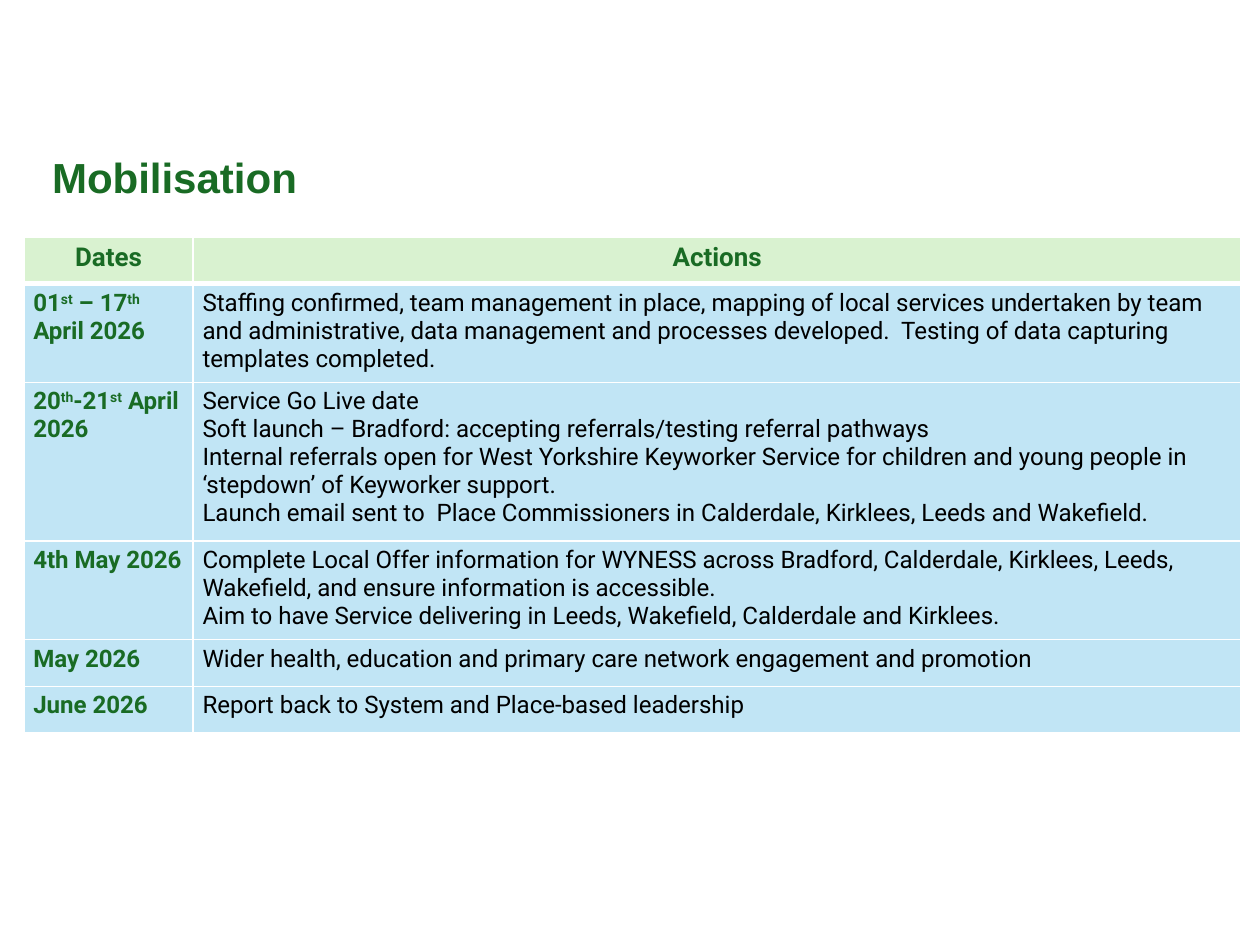
from lxml import etree
from pptx import Presentation
from pptx.dml.color import RGBColor
from pptx.enum.text import MSO_ANCHOR, PP_ALIGN
from pptx.oxml.ns import qn
from pptx.util import Inches, Pt

LEFT, CENTER = PP_ALIGN.LEFT, PP_ALIGN.CENTER
TOP = MSO_ANCHOR.TOP

# Content: ^ marks the start and end of a superscript
TITLE = "Mobilisation"
HEADERS = ("Dates", "Actions")
MILESTONES = [
    ("01^st^ – 17^th^ April 2026", [
        "Staffing confirmed, team management in place, mapping of local services "
        "undertaken by team and administrative, data management and processes "
        "developed.  Testing of data capturing templates completed."]),
    ("20^th^-21^st^ April 2026", [
        "Service Go Live date",
        "Soft launch – Bradford: accepting referrals/testing referral pathways",
        "Internal referrals open for West Yorkshire Keyworker Service for children "
        "and young people in ‘stepdown’ of Keyworker support.",
        "Launch email sent to  Place Commissioners in Calderdale, Kirklees, Leeds "
        "and Wakefield."]),
    ("4th May 2026", [
        "Complete Local Offer information for WYNESS across Bradford, Calderdale, "
        "Kirklees, Leeds, Wakefield, and ensure information is accessible.",
        "Aim to have Service delivering in Leeds, Wakefield, Calderdale and Kirklees."]),
    ("May 2026", [
        "Wider health, education and primary care network engagement and promotion"]),
    ("June 2026", ["Report back to System and Place-based leadership"]),
]
COL_WIDTHS = (1.27, 7.86)
ROW_HEIGHTS = (0.35, 0.74, 1.19, 0.74, 0.35, 0.35)

THEME = {
    "green": "196B24", "black": "000000", "white": "FFFFFF",
    "header_fill": "D9F2D0", "body_fill": "C1E5F5",
    "title_font": "Arial", "table_font": "Roboto",
    "title_size": 22.7, "header_size": 14, "body_size": 13,
    "line": 1, "header_line": 3,
}


def style(p, font, size, color, bold, align=LEFT):
    p.alignment = align
    p.font.name = THEME[font]
    p.font.size = Pt(THEME[size])
    p.font.color.rgb = RGBColor.from_string(THEME[color])
    p.font.bold = bold


def set_margins(box):
    box.margin_left = box.margin_right = Inches(0.07)
    box.margin_top = box.margin_bottom = Inches(0.04)


def add_runs(p, text):
    for i, part in enumerate(text.split("^")):
        if part:
            r = p.add_run()
            r.text = part
            if i % 2:
                r.font._element.set("baseline", "30000")


def set_borders(cell, top, bottom):
    tc_pr = cell._tc.get_or_add_tcPr()
    for side, width in (("L", "line"), ("R", "line"), ("T", top), ("B", bottom)):
        ln = etree.SubElement(tc_pr, qn(f"a:ln{side}"), w=str(Pt(THEME[width])))
        fill = etree.SubElement(ln, qn("a:solidFill"))
        etree.SubElement(fill, qn("a:srgbClr"), val=THEME["white"])


def fill_cell(cell, lines, fill, size, color, bold, align, top, bottom):
    set_margins(cell)
    set_borders(cell, top, bottom)
    cell.fill.solid()
    cell.fill.fore_color.rgb = RGBColor.from_string(THEME[fill])
    tf = cell.text_frame
    for i, line in enumerate(lines):
        p = tf.add_paragraph() if i else tf.paragraphs[0]
        add_runs(p, line)
        style(p, "table_font", size, color, bold, align)


prs = Presentation()
prs.slide_width, prs.slide_height = Inches(9.45), Inches(7.09)
s = prs.slides.add_slide(prs.slide_layouts[6])

# Title
tf = s.shapes.add_textbox(Inches(0.32), Inches(1.1), Inches(8.02), Inches(0.67)).text_frame
tf.word_wrap = True
tf.vertical_anchor = TOP
set_margins(tf)
tf.paragraphs[0].text = TITLE
style(tf.paragraphs[0], "title_font", "title_size", "green", True)

# Timetable
table = s.shapes.add_table(
    len(ROW_HEIGHTS), len(COL_WIDTHS), Inches(0.18), Inches(1.78),
    Inches(sum(COL_WIDTHS)), Inches(sum(ROW_HEIGHTS))).table
table.horz_banding = False
for column, width in zip(table.columns, COL_WIDTHS):
    column.width = Inches(width)
for row, height in zip(table.rows, ROW_HEIGHTS):
    row.height = Inches(height)

for c, header in enumerate(HEADERS):
    fill_cell(table.cell(0, c), [header], "header_fill", "header_size",
              "green", True, CENTER, "line", "header_line")
for r, (date, actions) in enumerate(MILESTONES, 1):
    top = "header_line" if r == 1 else "line"
    for c, (lines, color) in enumerate((([date], "green"), (actions, "black"))):
        fill_cell(table.cell(r, c), lines, "body_fill", "body_size",
                  color, c == 0, LEFT, top, "line")

prs.save("out.pptx")
